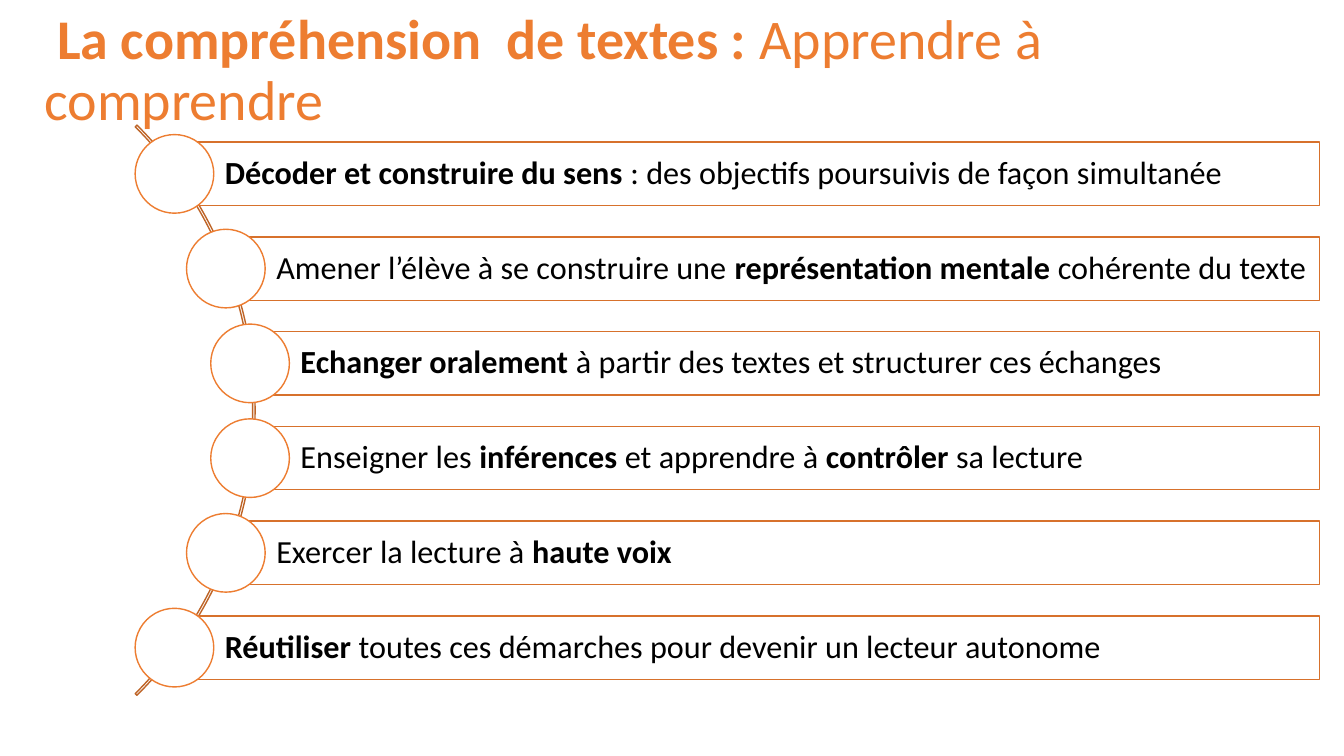
from dataclasses import dataclass

import pptx
import pptx.dml.color
import pptx.enum.shapes
import pptx.enum.text
import pptx.util
from pptx.util import Inches

SHAPE = pptx.enum.shapes.MSO_SHAPE


@dataclass(frozen=True)
class Theme:
    font: str = "Calibri"
    accent: str = "ED7D31"
    bar_line: str = "D7712C"
    arc_line: str = "BE6427"
    white: str = "FFFFFF"
    text: str = "000000"
    title_size: float = 40
    step_size: float = 23
    line_width: float = 1


@dataclass(frozen=True)
class Run:
    text: str
    bold: bool = False


@dataclass(frozen=True)
class Step:
    left: float
    runs: tuple[Run, ...]


@dataclass(frozen=True)
class Box:
    left: float
    top: float
    width: float
    height: float


THEME = Theme()
BAR_TOP, BAR_RIGHT, BAR_HEIGHT, PITCH = 1.41, 13.09, 0.63, 0.94
CIRCLE = 0.78
OUTER, MIDDLE, INNER = 1.73, 2.24, 2.48

TITLE = (
    Run(" "),
    Run("La compréhension  de textes : ", True),
    Run("Apprendre à comprendre"),
)
STEPS = (
    Step(OUTER, (Run("Décoder et construire du sens ", True),
                 Run(": des objectifs poursuivis de façon simultanée"))),
    Step(MIDDLE, (Run("Amener l’élève à se construire une "),
                  Run("représentation mentale ", True),
                  Run("cohérente du texte"))),
    Step(INNER, (Run("Echanger oralement ", True),
                 Run("à partir des textes et structurer ces échanges"))),
    Step(INNER, (Run("Enseigner les "), Run("inférences", True),
                 Run(" et apprendre à "), Run("contrôler", True),
                 Run(" sa lecture"))),
    Step(MIDDLE, (Run("Exercer la lecture à "), Run("haute voix", True))),
    Step(OUTER, (Run("Réutiliser", True),
                 Run(" toutes ces démarches pour devenir un lecteur autonome"))),
)


def rgb(value: str) -> pptx.dml.color.RGBColor:
    return pptx.dml.color.RGBColor.from_string(value)


def write_text(sp, runs: tuple[Run, ...], size: float, color: str,
               left: float, inset: float, v_inset: float) -> None:
    """Fill a shape with one left-aligned, vertically centred paragraph."""
    tf = sp.text_frame
    frame_format = {
        "word_wrap": True,
        "auto_size": pptx.enum.text.MSO_AUTO_SIZE.NONE,
        "vertical_anchor": pptx.enum.text.MSO_ANCHOR.MIDDLE,
        "margin_left": Inches(left),
        "margin_right": Inches(inset),
        "margin_top": Inches(v_inset),
        "margin_bottom": Inches(v_inset),
    }
    for name, value in frame_format.items():
        setattr(tf, name, value)
    p = tf.paragraphs[0]
    p.alignment = pptx.enum.text.PP_ALIGN.LEFT
    p.line_spacing = 0.9
    for run in runs:
        r = p.add_run()
        r.text = run.text
        font_format = {"name": THEME.font, "size": pptx.util.Pt(size), "bold": run.bold}
        for name, value in font_format.items():
            setattr(r.font, name, value)
        r.font.color.rgb = rgb(color)


def add_outlined(s, kind, box: Box, line: str, fill: str | None = THEME.white):
    sp = s.shapes.add_shape(kind, Inches(box.left), Inches(box.top),
                            Inches(box.width), Inches(box.height))
    sp.shadow.inherit = False
    if fill is None:
        sp.fill.background()
    else:
        sp.fill.solid()
        sp.fill.fore_color.rgb = rgb(fill)
    sp.line.color.rgb = rgb(line)
    sp.line.width = pptx.util.Pt(THEME.line_width)
    return sp


def add_title(s) -> None:
    sp = s.shapes.title
    place = {"left": 0.34, "top": 0, "width": 12.66, "height": 1.43}
    for name, value in place.items():
        setattr(sp, name, Inches(value))
    write_text(sp, TITLE, THEME.title_size, THEME.accent, 0.1, 0.1, 0.05)


def add_arc(s) -> None:
    sp = add_outlined(s, SHAPE.BLOCK_ARC, Box(-5.47, 0.07, 8, 8), THEME.arc_line, None)
    for i, value in enumerate((189, 27, 0.003)):
        sp.adjustments[i] = value


def add_step(s, step: Step, top: float) -> None:
    """Draw a bar and the circle centred on its left edge."""
    bar = add_outlined(s, SHAPE.RECTANGLE,
                       Box(step.left, top, BAR_RIGHT - step.left, BAR_HEIGHT),
                       THEME.bar_line)
    write_text(bar, step.runs, THEME.step_size, THEME.text, 0.5, 0.06, 0.06)
    circle = Box(step.left - CIRCLE / 2, top + (BAR_HEIGHT - CIRCLE) / 2, CIRCLE, CIRCLE)
    add_outlined(s, SHAPE.OVAL, circle, THEME.accent)


def main() -> None:
    prs = pptx.Presentation()
    prs.slide_width, prs.slide_height = Inches(13.33), Inches(7.5)
    s = prs.slides.add_slide(prs.slide_layouts.get_by_name("Title Only"))
    add_title(s)
    add_arc(s)
    for i, step in enumerate(STEPS):
        add_step(s, step, BAR_TOP + i * PITCH)
    prs.save("out.pptx")


if __name__ == "__main__":
    main()
